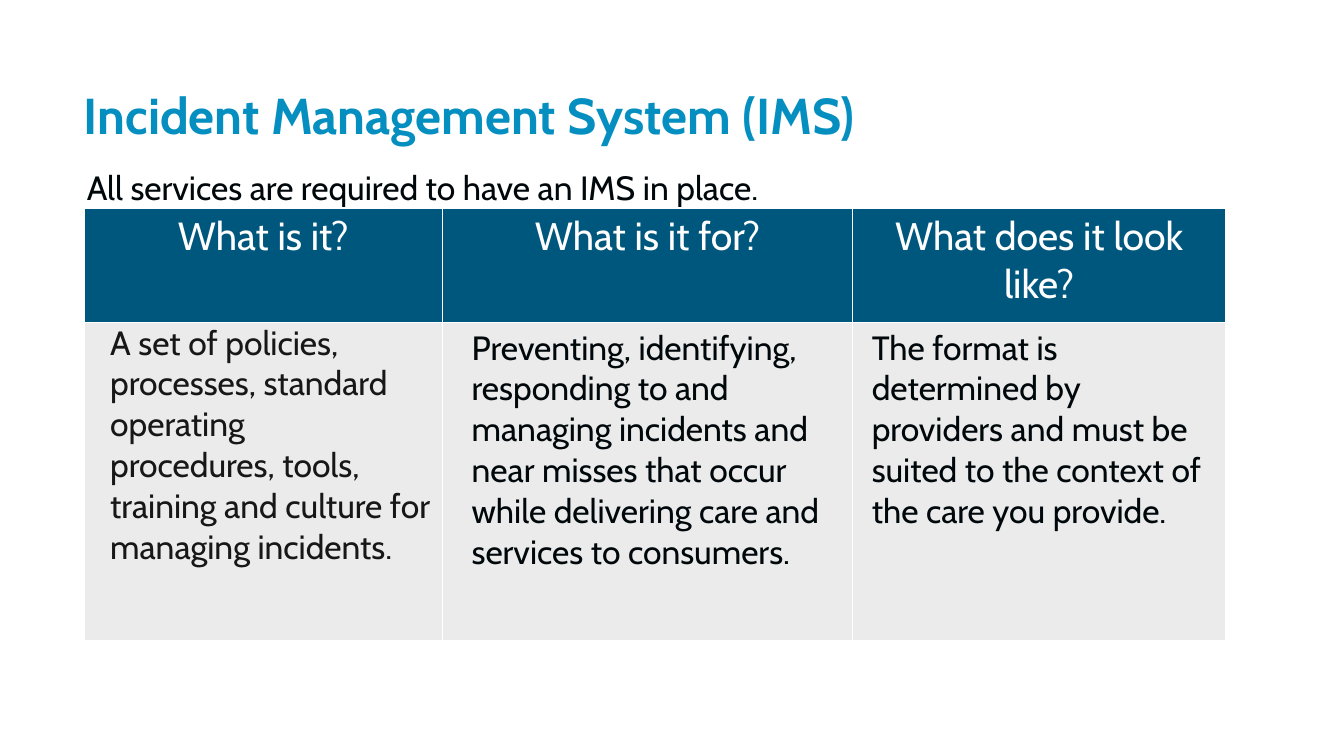
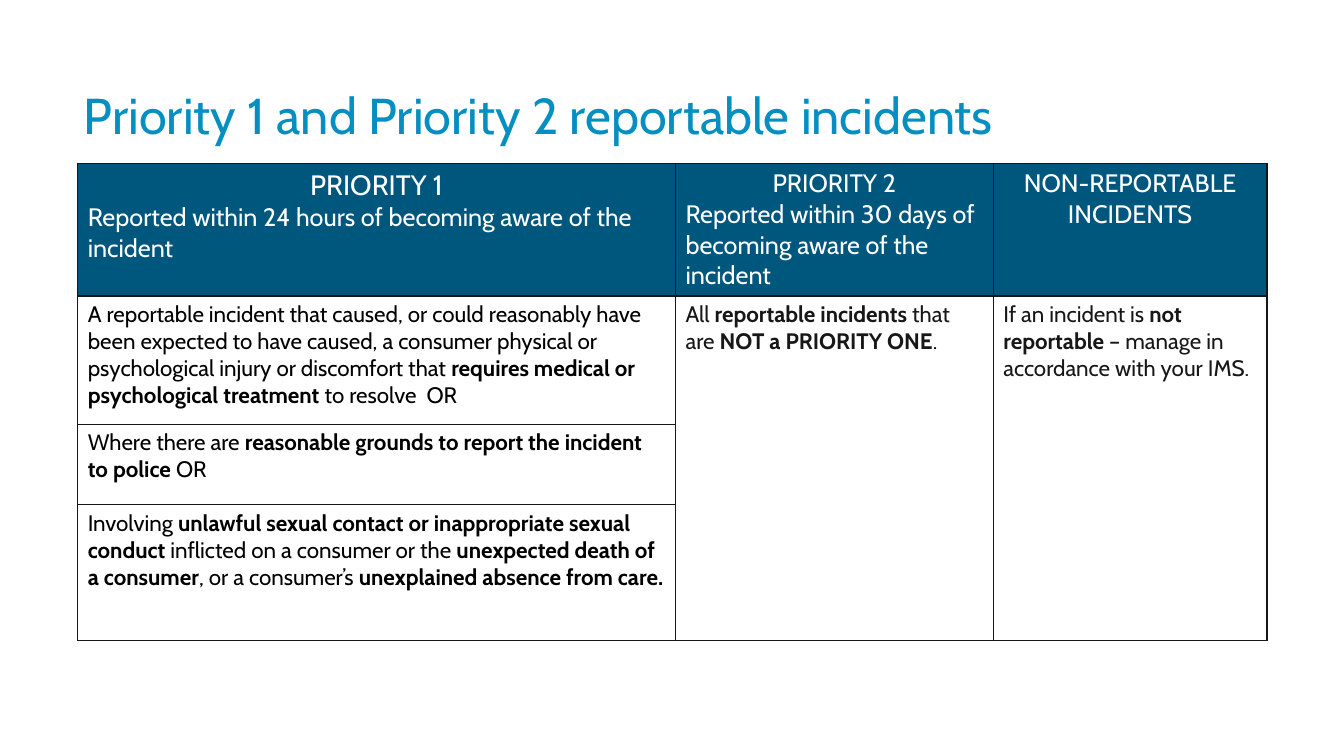
from dataclasses import dataclass
from lxml.etree import SubElement
from pptx import Presentation
from pptx.dml.color import RGBColor
from pptx.enum.text import PP_ALIGN
from pptx.oxml.ns import qn
from pptx.util import Pt


@dataclass(frozen=True)
class Theme:
    font: str = "Cabin"
    title: str = "048FC0"
    band: str = "00577D"
    panel: str = "EBEBEB"
    white: str = "FFFFFF"
    ink: str = "00080C"
    dark: str = "181717"
    black: str = "000000"
    head: int = 36
    big: int = 28
    body: int = 24
    lead: int = 20
    mid: int = 18
    small: int = 16


T = Theme()
MID, LEFT = PP_ALIGN.CENTER, PP_ALIGN.LEFT
INSET = (7.2, 3.6, 7.2, 3.6)


def cell(paras, size, color, fill=None, align=LEFT, inset=INSET):
    return dict(paras=[(text, size, align) for text in paras],
                color=color, fill=fill, inset=inset)


def header(*paras):
    return dict(paras=paras, color=T.white, fill=T.band, inset=INSET)


SYSTEM = dict(
    left=60, top=148.5, cols=(256, 293, 266.5), rows=(82, 227),
    line=T.white, spans=(),
    cells=[
        [header((text, T.big, MID)) for text in
         ("What is it?", "What is it for?", "What does it look like?")],
        [cell(["A set of policies,", "processes, standard operating",
               "procedures, tools, training and culture for managing incidents."],
              T.body, T.dark, T.panel, inset=(18.7, 0, 5, 0)),
         cell(["Preventing, identifying, responding to and managing incidents and "
               "near misses that occur while delivering care and services to consumers."],
              T.body, T.ink, T.panel, inset=(20.9, 3.6, 7.2, 3.6)),
         cell(["The format is determined by providers and must be suited to the "
               "context of the care you provide."],
              T.body, T.ink, T.panel, inset=(13.7, 3.6, 7.2, 3.6))],
    ])

PRIORITY = dict(
    left=55.5, top=116.5, cols=(427, 227, 195.5), rows=(95, 91.5, 57.5, 97),
    line=T.dark, spans=((1, 1, 3, 1), (1, 2, 3, 2)),
    cells=[
        [header(("PRIORITY 1", T.lead, MID),
                ("Reported within 24 hours of becoming aware of the incident", T.mid, LEFT)),
         header(("PRIORITY 2", T.mid, MID),
                ("Reported within 30 days of becoming aware of the incident", T.mid, LEFT)),
         header(("NON-REPORTABLE INCIDENTS", T.mid, MID))],
        [cell(["A reportable incident that caused, or could reasonably have been expected "
               "to have caused, a consumer physical or psychological injury or discomfort "
               "that **requires medical or psychological treatment **to resolve  OR"],
              T.small, T.black),
         cell(["All **reportable incidents **that are **NOT a PRIORITY ONE**."],
              T.small, T.dark),
         cell(["If an incident is **not reportable **– manage in accordance with your IMS."],
              T.small, T.dark)],
        [cell(["Where there are **reasonable grounds to report the incident to police **OR"],
              T.small, T.black)],
        [cell(["Involving **unlawful sexual contact or inappropriate sexual conduct **"
               "inflicted on a consumer or the **unexpected death of a consumer**, "
               "or a consumer’s **unexplained absence from care.**"],
              T.small, T.black)],
    ])

SLIDES = [
    ("**Incident Management System (IMS)**",
     "All services are required to have an IMS in place.", SYSTEM),
    ("Priority 1 and Priority 2 reportable incidents", None, PRIORITY),
]


def write(frame, paras, color, inset, space=None):
    frame.word_wrap = True
    for num, (text, size, align) in enumerate(paras):
        para = frame.add_paragraph() if num else frame.paragraphs[0]
        para.alignment = align
        para.line_spacing = space
        for turn, part in enumerate(text.split("**")):
            if part:
                run = para.add_run()
                run.text = part
                font = run.font
                font.name, font.size, font.bold = T.font, Pt(size), turn % 2 == 1
                font.color.rgb = RGBColor.from_string(color)
    pad(frame, inset)


def pad(box, inset):
    (box.margin_left, box.margin_top,
     box.margin_right, box.margin_bottom) = map(Pt, inset)


def label(slide, text, size, color, area, space):
    box = slide.shapes.add_textbox(*map(Pt, area))
    write(box.text_frame, [(text, size, LEFT)], color, (0, 0, 0, 0), space)


def edge(spot, color):
    props = spot._tc.get_or_add_tcPr()
    for side in ("lnL", "lnR", "lnT", "lnB"):
        line = SubElement(props, qn("a:" + side), w=str(Pt(1)))
        SubElement(SubElement(line, qn("a:solidFill")), qn("a:srgbClr"), val=color)


def grid(slide, data):
    cols, rows = data["cols"], data["rows"]
    area = (data["left"], data["top"], sum(cols), sum(rows))
    table = slide.shapes.add_table(len(rows), len(cols), *map(Pt, area)).table
    table.first_row = table.horz_banding = False
    for col, width in zip(table.columns, cols):
        col.width = Pt(width)
    for row, height in zip(table.rows, rows):
        row.height = Pt(height)
    for spot in table.iter_cells():
        edge(spot, data["line"])
        spot.fill.background()
    for top, left, low, right in data["spans"]:
        table.cell(top, left).merge(table.cell(low, right))
    for r, line in enumerate(data["cells"]):
        for c, item in enumerate(line):
            spot = table.cell(r, c)
            write(spot.text_frame, item["paras"], item["color"], item["inset"])
            pad(spot, item["inset"])
            if item["fill"]:
                spot.fill.solid()
                spot.fill.fore_color.rgb = RGBColor.from_string(item["fill"])


def main():
    deck = Presentation()
    deck.slide_width, deck.slide_height = Pt(960), Pt(540)
    for title, intro, data in SLIDES:
        slide = deck.slides.add_slide(deck.slide_layouts[6])
        label(slide, title, T.head, T.title, (60, 65, 762, 42), 0.9)
        if intro:
            label(slide, intro, T.body, T.ink, (62, 104.5, 690, 43), 1.5)
        grid(slide, data)
    deck.save("out.pptx")


if __name__ == "__main__":
    main()
